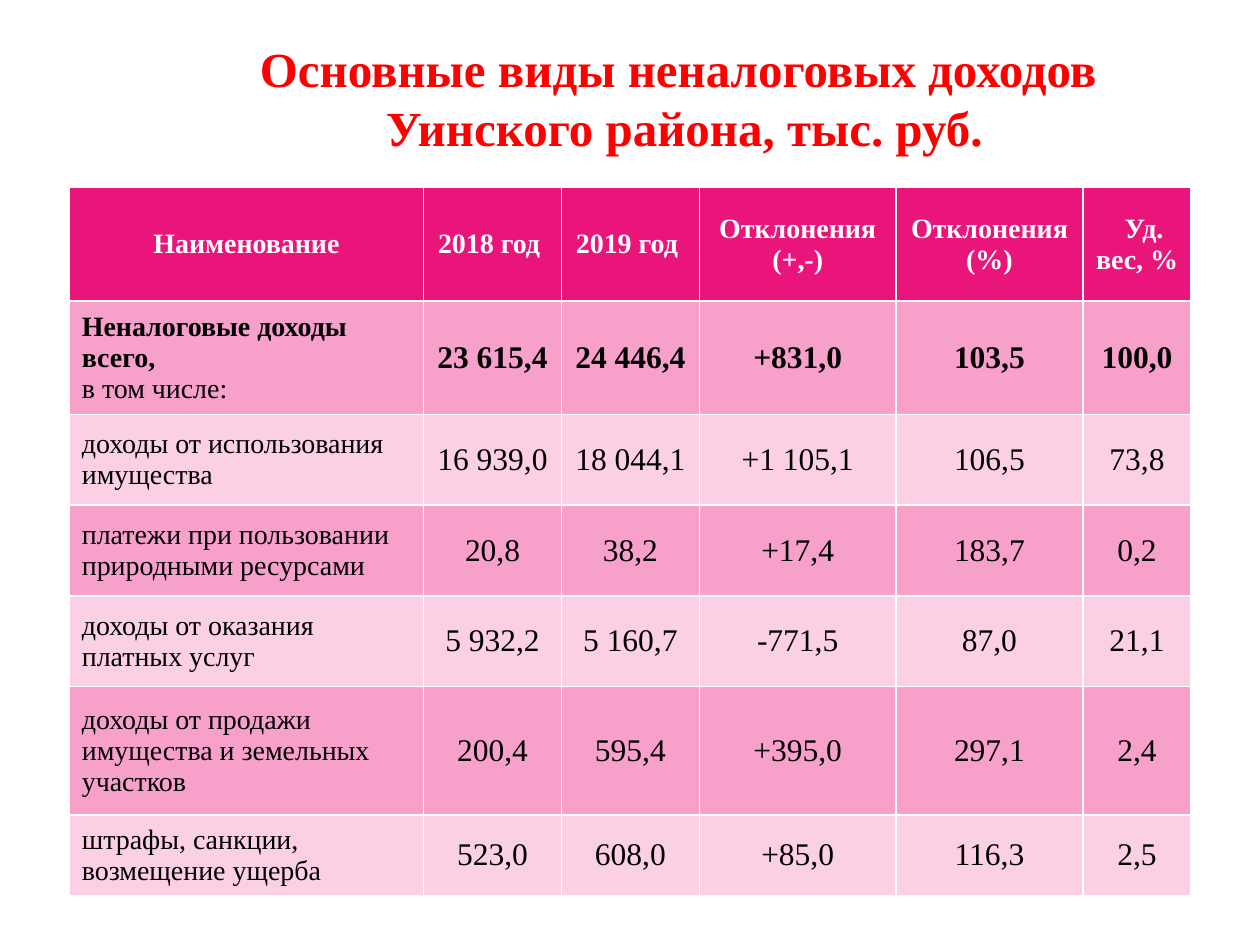
"""Build a slide with a table of non-tax income of a district."""
from dataclasses import dataclass

from lxml.etree import SubElement
from pptx import Presentation
from pptx.dml.color import RGBColor
from pptx.enum.text import MSO_ANCHOR, PP_ALIGN
from pptx.oxml import parse_xml
from pptx.oxml.ns import nsdecls, qn
from pptx.slide import Slide
from pptx.table import Table, _Cell
from pptx.text.text import _Paragraph
from pptx.util import Pt

FACE = "Times New Roman"
RED = RGBColor(0xFF, 0x00, 0x00)
WHITE = RGBColor(0xFF, 0xFF, 0xFF)
BLACK = RGBColor(0x00, 0x00, 0x00)
HOT = RGBColor(0xEA, 0x15, 0x7A)
ROSE = RGBColor(0xF7, 0xA1, 0xCA)
PALE = RGBColor(0xFB, 0xD0, 0xE4)
WIDTHS = (202.5, 78.8, 78.8, 112.4, 106.8, 61.9)


@dataclass(frozen=True)
class Style:
    """Look of one paragraph."""
    size: float
    color: RGBColor
    bold: bool = False
    align: PP_ALIGN = PP_ALIGN.CENTER


@dataclass(frozen=True)
class Row:
    """One table row: its label, height and figures."""
    label: str
    height: float
    values: tuple[str, ...]
    total: bool = False


HEAD = Row("Наименование", 65.2, (
    "2018 год ", "2019 год ", "Отклонения (+,-)", "Отклонения (%)", "Уд. вес, %"))
ROWS = (
    Row("Неналоговые доходы всего,\nв том числе:", 64.8,
        ("23 615,4", "24 446,4", "+831,0", "103,5", "100,0"), True),
    Row("доходы от использования имущества", 51.8,
        ("16 939,0", "18 044,1", "+1 105,1", "106,5", "73,8")),
    Row("платежи при пользовании природными ресурсами", 51.8,
        ("20,8", "38,2", "+17,4", "183,7", "0,2")),
    Row("доходы от оказания платных услуг", 51.8,
        ("5 932,2", "5 160,7", "-771,5", "87,0", "21,1")),
    Row("доходы от продажи имущества и земельных участков", 73.4,
        ("200,4", "595,4", "+395,0", "297,1", "2,4")),
    Row("штрафы, санкции, возмещение ущерба", 46.1,
        ("523,0", "608,0", "+85,0", "116,3", "2,5")),
)


def dress(para: _Paragraph, style: Style) -> None:
    """Apply a style to a paragraph."""
    para.alignment = style.align
    font = para.font
    font.name, font.size, font.bold = FACE, Pt(style.size), style.bold
    font.color.rgb = style.color


def shade(para: _Paragraph) -> None:
    """Give the runs of a paragraph a soft shadow."""
    for run in para.runs:
        props = run._r.get_or_add_rPr()
        props.append(parse_xml(
            f'<a:effectLst {nsdecls("a")}>'
            '<a:outerShdw blurRad="38100" dist="38100" dir="2700000" algn="tl">'
            '<a:srgbClr val="000000"><a:alpha val="43000"/></a:srgbClr>'
            '</a:outerShdw></a:effectLst>'))


def add_title(slide: Slide) -> None:
    """Add the two-line heading."""
    box = slide.shapes.add_textbox(Pt(95.8), Pt(22.3), Pt(590.4), Pt(67))
    frame = box.text_frame
    frame.word_wrap = True
    frame.vertical_anchor = MSO_ANCHOR.MIDDLE
    para = frame.paragraphs[0]
    para.text = "Основные виды неналоговых доходов \vУинского района, тыс. руб."
    dress(para, Style(28, RED, True))
    shade(para)


def fill_cell(cell: _Cell, text: str, fill: RGBColor, *styles: Style) -> None:
    """Write text into a cell, one style for each paragraph."""
    cell.fill.solid()
    cell.fill.fore_color.rgb = fill
    cell.vertical_anchor = MSO_ANCHOR.MIDDLE
    cell.text = text
    for para, style in zip(cell.text_frame.paragraphs, styles):
        dress(para, style)


def fill_row(table: Table, index: int, row: Row, fill: RGBColor,
             labels: tuple[Style, ...], value: Style) -> None:
    """Fill one row of the table."""
    table.rows[index].height = Pt(row.height)
    fill_cell(table.cell(index, 0), row.label, fill, *labels)
    for col, text in enumerate(row.values, 1):
        fill_cell(table.cell(index, col), text, fill, value)


def add_grid(slide: Slide) -> None:
    """Add the table of income."""
    table = slide.shapes.add_table(
        len(ROWS) + 1, len(WIDTHS), Pt(39.6), Pt(106.9), Pt(641.2),
        Pt(HEAD.height + sum(row.height for row in ROWS))).table
    for col, width in zip(table.columns, WIDTHS):
        col.width = Pt(width)
    top = Style(16, WHITE, True)
    fill_row(table, 0, HEAD, HOT, (top,), top)
    last = table.cell(0, len(WIDTHS) - 1).text_frame.paragraphs[0]
    last._p.get_or_add_pPr().set("indent", str(Pt(8)))
    for index, row in enumerate(ROWS, 1):
        labels = (Style(16, BLACK, row.total, PP_ALIGN.LEFT),
                  Style(16, BLACK, False, PP_ALIGN.LEFT))
        fill_row(table, index, row, ROSE if index % 2 else PALE,
                 labels, Style(18, BLACK, row.total))


def main() -> None:
    """Build and save the deck."""
    deck = Presentation()
    deck.slide_width, deck.slide_height = Pt(720), Pt(540)
    slide = deck.slides.add_slide(deck.slide_layouts[6])
    add_title(slide)
    add_grid(slide)
    deck.save("out.pptx")


if __name__ == "__main__":
    main()
